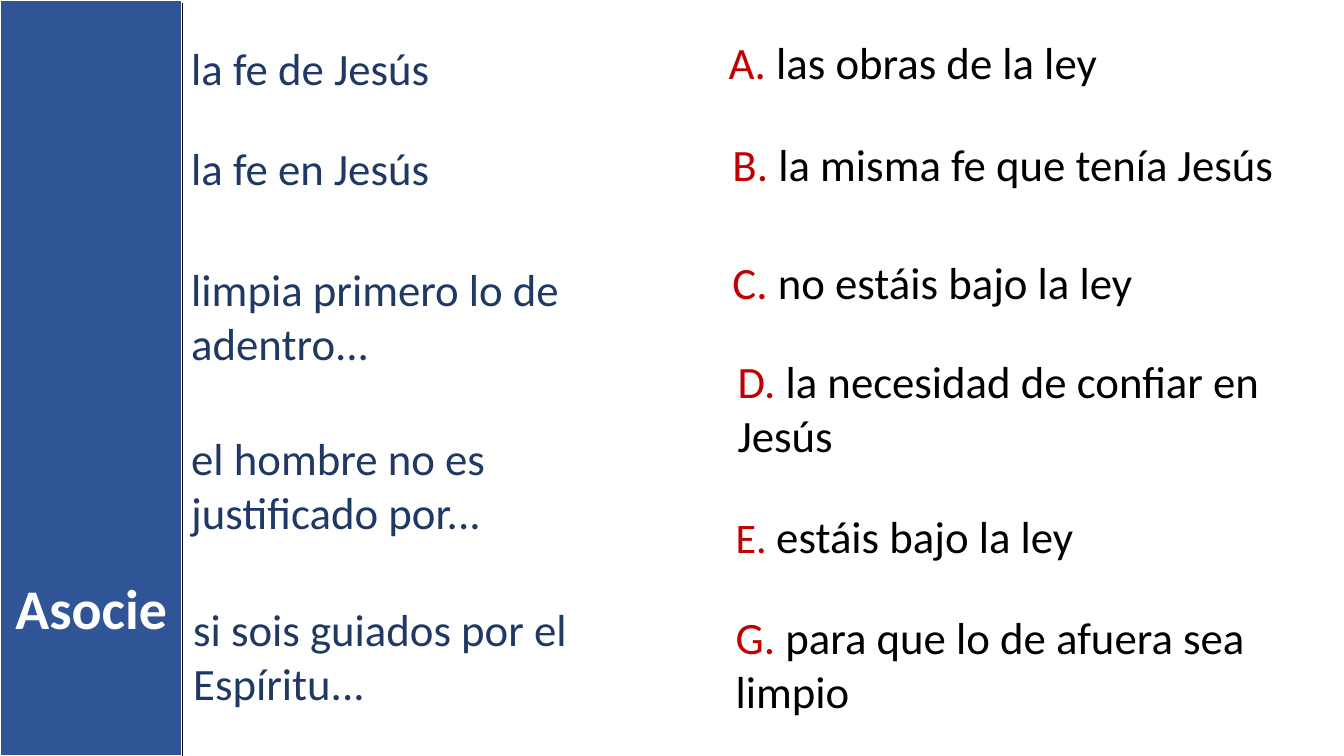
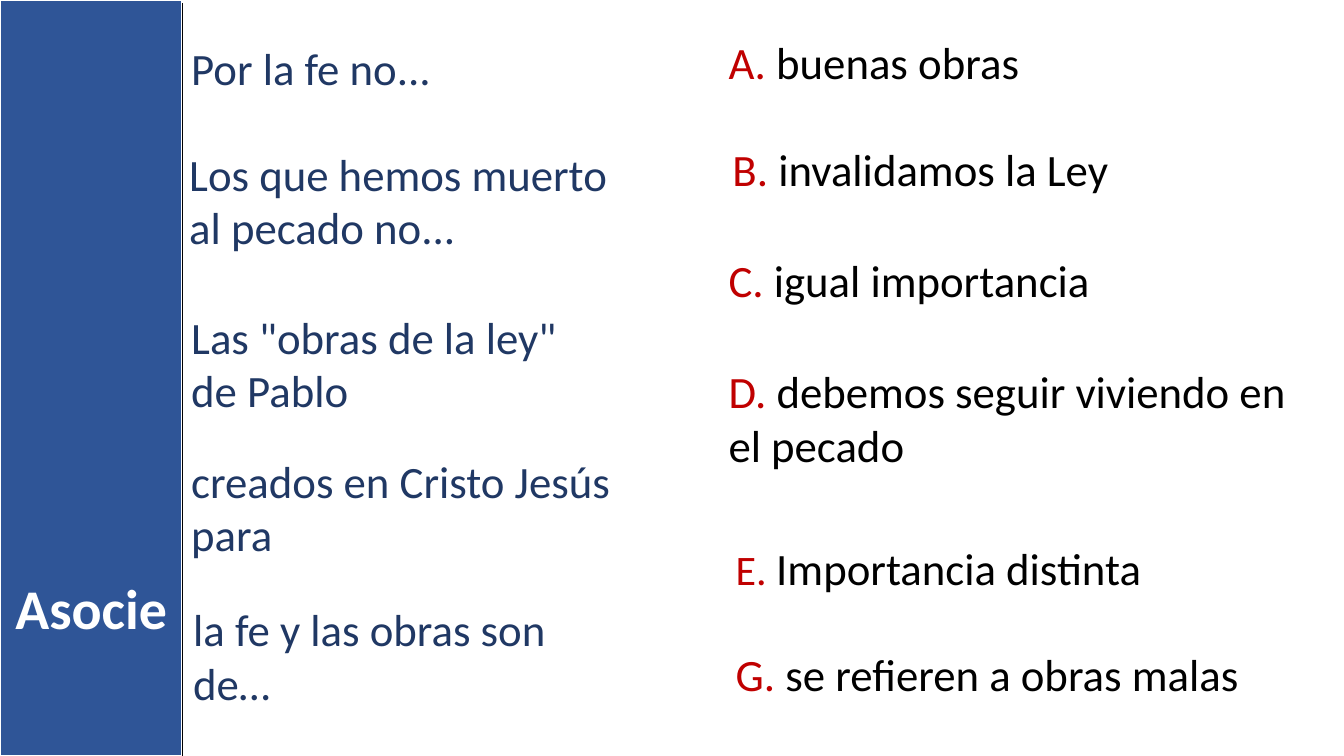
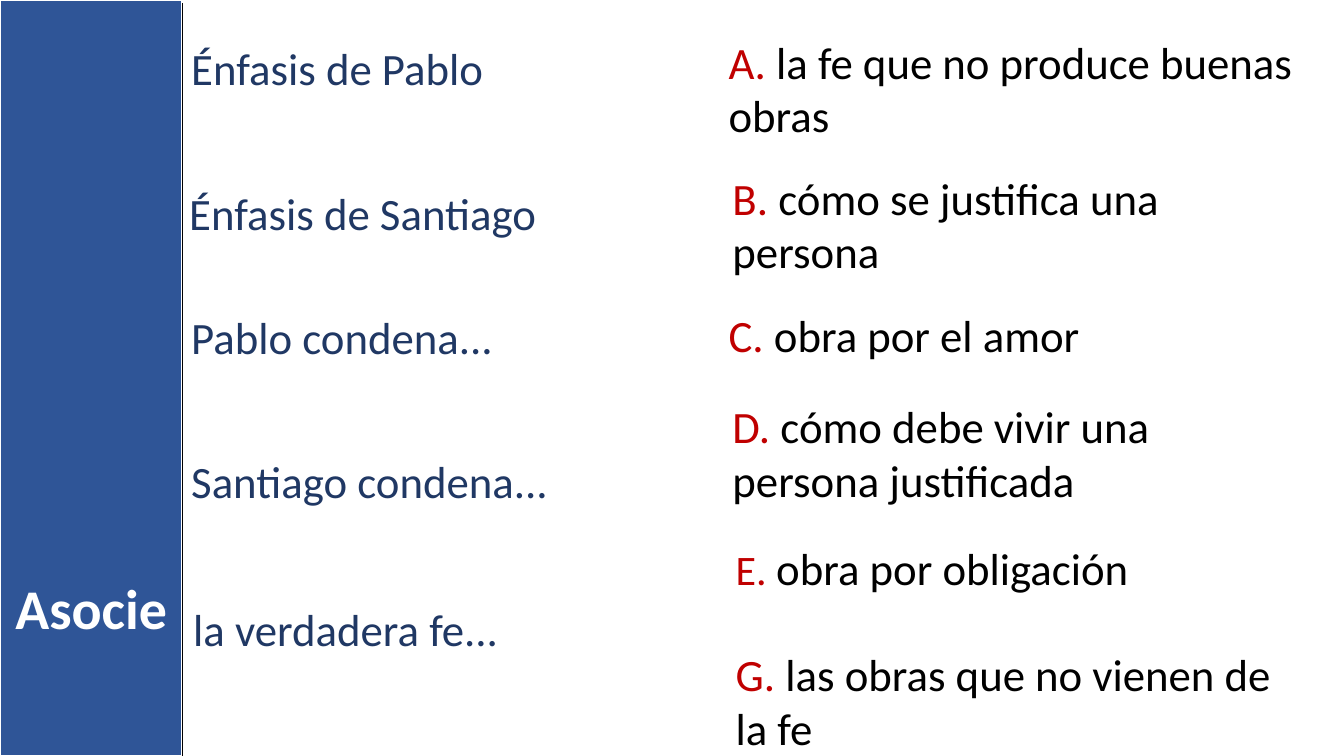
from collections import namedtuple

from lxml import etree
from pptx import Presentation
from pptx.dml.color import RGBColor
from pptx.enum import shapes, text
from pptx.oxml import ns
from pptx.util import Cm, Pt

FONT = "Calibri"
BLUE = RGBColor(0x2F, 0x55, 0x97)
NAVY = RGBColor(0x20, 0x38, 0x64)
RED = RGBColor(0xC0, 0x00, 0x00)
BLACK = RGBColor(0x00, 0x00, 0x00)
WHITE = RGBColor(0xFF, 0xFF, 0xFF)

# Lengths in centimetres
SLIDE_W, SLIDE_H = 33.87, 19.05
BAND_W = 4.6
PROMPTS_X, ANSWERS_X = 4.57, 18.11
FIRST_LINE_H, NEXT_LINE_H = 1.63, 1.37
ANSWER_WIDTHS = {"A": 15.37, "B": 15.04, "C": 14.58,
                 "D": 14.73, "E": 14.05, "G": 14.2}

# dx is the offset from the left edge of the column
Prompt = namedtuple("Prompt", "dx top width lines text")
Answer = namedtuple("Answer", "letter dx top lines text")

EXERCISES = [
    ([Prompt(0, 0.89, 13.34, 1, "la fe de Jesús"),
      Prompt(0, 3.43, 11.73, 1, "la fe en Jesús"),
      Prompt(0, 6.48, 12.5, 2, "limpia primero lo de adentro..."),
      Prompt(0, 10.74, 11.68, 2, "el hombre no es justificado por..."),
      Prompt(0.05, 15.04, 11.2, 2, "si sois guiados por el Espíritu...")],
     [Answer("A", 0, 0.74, 1, "las obras de la ley"),
      Answer("B", 0.1, 3.33, 1, "la misma fe que tenía Jesús"),
      Answer("C", 0.1, 6.3, 1, "no estáis bajo la ley"),
      Answer("D", 0.23, 8.79, 2, "la necesidad de confiar en Jesús"),
      Answer("E", 0.18, 12.7, 1, "estáis bajo la ley"),
      Answer("G", 0.18, 15.24, 2, "para que lo de afuera sea limpio")]),
    ([Prompt(0, 0.89, 11.25, 1, "Por la fe no..."),
      Prompt(-0.05, 3.56, 11.73, 2, "Los que hemos muerto al pecado no..."),
      Prompt(0, 7.67, 10.44, 2, 'Las "obras de la ley" de Pablo'),
      Prompt(0, 11.3, 11.68, 2, "creados en Cristo Jesús para"),
      Prompt(0.05, 15.04, 11.2, 2, "la fe y las obras son de…")],
     [Answer("A", 0, 0.74, 1, "buenas obras"),
      Answer("B", 0.1, 3.45, 1, "invalidamos la Ley"),
      Answer("C", 0, 6.25, 1, "igual importancia"),
      Answer("D", 0, 9.04, 2, "debemos seguir viviendo en el pecado"),
      Answer("E", 0.18, 13.51, 1, "Importancia distinta"),
      Answer("G", 0.18, 16.18, 1, "se refieren a obras malas")]),
    ([Prompt(0, 0.89, 11.25, 1, "Énfasis de Pablo"),
      Prompt(-0.05, 4.55, 11.73, 1, "Énfasis de Santiago"),
      Prompt(0, 7.67, 10.44, 1, "Pablo condena..."),
      Prompt(0, 11.3, 11.68, 1, "Santiago condena..."),
      Prompt(0.05, 15.04, 11.2, 1, "la verdadera fe...")],
     [Answer("A", 0, 0.74, 2, "la fe que no produce buenas obras"),
      Answer("B", 0.1, 4.17, 2, "cómo se justifica una persona"),
      Answer("C", 0, 7.62, 1, "obra por el amor"),
      Answer("D", 0.1, 9.93, 2, "cómo debe vivir una persona justificada"),
      Answer("E", 0.18, 13.51, 1, "obra por obligación"),
      Answer("G", 0.18, 16.18, 2, "las obras que no vienen de la fe")]),
]


def add_run(p, words, size=32, color=BLACK, bold=False):
    r = p.add_run()
    r.text = words
    r.font.name = FONT
    r.font.size = Pt(size)
    r.font.color.rgb = color
    r.font.bold = bold


def add_box(slide, left, top, width, lines):
    """Add a wrapping text box for that many lines; return its paragraph."""
    height = FIRST_LINE_H + (lines - 1) * NEXT_LINE_H
    sp = slide.shapes.add_textbox(Cm(left), Cm(top), Cm(width), Cm(height))
    tf = sp.text_frame
    tf.word_wrap = True
    tf.auto_size = text.MSO_AUTO_SIZE.SHAPE_TO_FIT_TEXT
    return tf.paragraphs[0]


def add_band(slide, width, height):
    band = slide.shapes.add_shape(shapes.MSO_SHAPE.RECTANGLE,
                                  0, 0, Cm(width), Cm(height))
    band.shadow.inherit = False
    band.fill.solid()
    band.fill.fore_color.rgb = BLUE
    band.line.color.rgb = WHITE
    band.line.width = Pt(1.5)
    # Send the band behind the title
    slide.shapes._spTree.insert(2, band._element)

    title = slide.shapes.title
    title.left, title.top = Cm(0), Cm(14.33)
    title.width, title.height = Cm(width), Cm(1.96)
    tf = title.text_frame
    tf.vertical_anchor = text.MSO_ANCHOR.TOP
    tf.auto_size = text.MSO_AUTO_SIZE.NONE
    p = tf.paragraphs[0]
    p.alignment = text.PP_ALIGN.CENTER
    add_run(p, "Asocie", size=40, color=WHITE, bold=True)

    edge = slide.shapes.add_connector(shapes.MSO_CONNECTOR.STRAIGHT,
                                      Cm(width), Cm(0.08),
                                      Cm(width), Cm(height))
    edge.line.color.rgb = BLACK
    edge.line.width = Pt(1)
    etree.SubElement(edge._element.spPr, ns.qn("a:effectLst"))


def add_prompts(slide, left, prompts):
    for item in prompts:
        p = add_box(slide, left + item.dx, item.top, item.width, item.lines)
        add_run(p, item.text, color=NAVY)


def add_answers(slide, left, answers):
    for item in answers:
        p = add_box(slide, left + item.dx, item.top,
                    ANSWER_WIDTHS[item.letter], item.lines)
        add_run(p, f"{item.letter}. ", color=RED,
                size=30 if item.letter == "E" else 32)
        add_run(p, item.text)


def add_exercise(prs, prompts, answers):
    slide = prs.slides.add_slide(prs.slide_layouts.get_by_name("Title Only"))
    add_band(slide, BAND_W, SLIDE_H)
    add_prompts(slide, PROMPTS_X, prompts)
    add_answers(slide, ANSWERS_X, answers)


def main():
    prs = Presentation()
    prs.slide_width, prs.slide_height = Cm(SLIDE_W), Cm(SLIDE_H)
    for prompts, answers in EXERCISES:
        add_exercise(prs, prompts, answers)
    prs.save("out.pptx")


if __name__ == "__main__":
    main()
